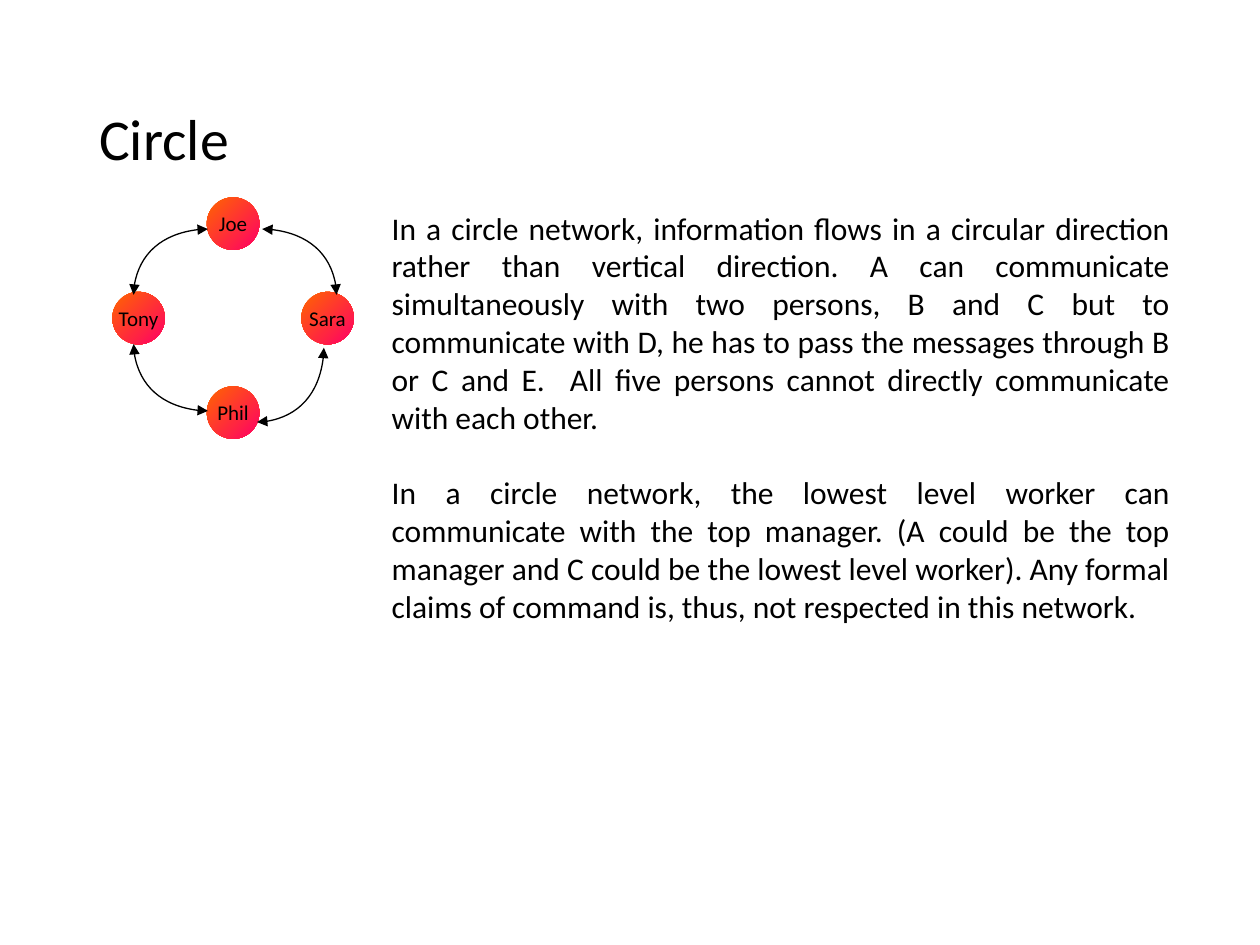
from dataclasses import dataclass

from lxml.etree import SubElement
from pptx import Presentation
from pptx.dml.color import RGBColor
from pptx.enum.shapes import MSO_SHAPE as Shape
from pptx.enum.text import MSO_ANCHOR as Anchor, MSO_AUTO_SIZE as AutoSize, PP_ALIGN as Align
from pptx.oxml.ns import qn
from pptx.util import Pt

TITLE = "Circle"
BODY = [
    "In a circle network, information flows in a circular direction rather than "
    "vertical direction. A can communicate simultaneously with two persons, B and C "
    "but to communicate with D, he has to pass the messages through B or C and E.  "
    "All five persons cannot directly communicate with each other.",
    "In a circle network, the lowest level worker can communicate with the top manager. "
    "(A could be the top manager and C could be the lowest level worker). Any formal "
    "claims of command is, thus, not respected in this network.",
]
# Name and direction from the centre of the ring
PEOPLE = [("Joe", 0, -1), ("Tony", -1, 0), ("Sara", 1, 0), ("Phil", 0, 1)]
# Upright end (x, y) at a side person, level end (x, y) at the top or bottom person
LINKS = [
    (185.1, 198.7, 146.9, 241.2),
    (76.3, 168.5, 118.8, 130.9),
    (76.3, 196.6, 118.8, 234.8),
    (192.3, 168.5, 149.8, 130.9),
]
RING_X, RING_Y, RING_RADIUS, NODE_SIZE = 133.2, 181.8, 54, 30
ROUNDNESS = 0.55  # control point reach of a quarter ellipse


@dataclass(frozen=True)
class Theme:
    font: str = "Calibri"
    ink: RGBColor = RGBColor(0, 0, 0)
    node_start: RGBColor = RGBColor(0xFF, 0x66, 0x00)
    node_end: RGBColor = RGBColor(0xFF, 0x00, 0x66)
    title_size: float = 33
    body_size: float = 18
    node_size: float = 12
    line_width: float = 0.75


THEME = Theme()


def format_text(frame, size, align):
    for para in frame.paragraphs:
        para.alignment = align
        for span in para.runs:
            span.font.name = THEME.font
            span.font.size = Pt(size)
            span.font.color.rgb = THEME.ink


def add_title(page):
    title = page.shapes.title
    title.left, title.top, title.width, title.height = Pt(49.5), Pt(28.8), Pt(621), Pt(104.4)
    frame = title.text_frame
    frame.text = TITLE
    frame.vertical_anchor = Anchor.MIDDLE
    frame.paragraphs[0].line_spacing = 0.9
    format_text(frame, THEME.title_size, Align.LEFT)


def add_person(page, name, across, down):
    left = RING_X + across * RING_RADIUS - NODE_SIZE / 2
    top = RING_Y + down * RING_RADIUS - NODE_SIZE / 2
    node = page.shapes.add_shape(Shape.OVAL, Pt(left), Pt(top), Pt(NODE_SIZE), Pt(NODE_SIZE))
    node.shadow.inherit = False
    node.line.fill.background()
    node.fill.gradient()
    node.fill.gradient_angle = 315
    for position, (stop, colour) in enumerate(
        zip(node.fill.gradient_stops, (THEME.node_start, THEME.node_end))
    ):
        stop.position = position
        stop.color.rgb = colour
    frame = node.text_frame
    frame.text = name
    frame.word_wrap = False
    frame.vertical_anchor = Anchor.MIDDLE
    format_text(frame, THEME.node_size, Align.CENTER)


def add_link(page, x, y, end_x, end_y):
    """Draw a quarter of an ellipse with an arrowhead at both ends."""
    builder = page.shapes.build_freeform(Pt(x), Pt(y))
    builder.add_line_segments([(Pt(end_x), Pt(end_y))], close=False)
    link = builder.convert_to_shape()
    link.shadow.inherit = False
    link.fill.background()
    link.line.color.rgb = THEME.ink
    link.line.width = Pt(THEME.line_width)
    properties = link._element.spPr

    # Turn the straight segment into a curve; path points are relative to the shape
    segment = next(properties.iter(qn("a:lnTo")))
    curve_path = segment.getparent()
    curve_path.remove(segment)
    curve = SubElement(curve_path, qn("a:cubicBezTo"))
    bent_y = y + (end_y - y) * ROUNDNESS
    bent_x = end_x + (x - end_x) * ROUNDNESS
    for point_x, point_y in ((x, bent_y), (bent_x, end_y), (end_x, end_y)):
        SubElement(
            curve, qn("a:pt"),
            x=str(Pt(point_x) - link.left), y=str(Pt(point_y) - link.top),
        )

    outline = properties.find(qn("a:ln"))
    for end in ("a:headEnd", "a:tailEnd"):
        SubElement(outline, qn(end), type="triangle")


def add_body(page):
    box = page.shapes.add_textbox(Pt(216.7), Pt(115.7), Pt(459), Pt(269.3))
    frame = box.text_frame
    frame.word_wrap = True
    frame.auto_size = AutoSize.SHAPE_TO_FIT_TEXT
    frame.text = "\n".join(BODY)
    frame.paragraphs[1].space_before = Pt(21.6)
    format_text(frame, THEME.body_size, Align.JUSTIFY)


def main():
    deck = Presentation()
    deck.slide_width, deck.slide_height = Pt(720), Pt(540)
    page = deck.slides.add_slide(deck.slide_layouts[5])
    add_title(page)
    for person in PEOPLE:
        add_person(page, *person)
    for link in LINKS:
        add_link(page, *link)
    add_body(page)
    deck.save("out.pptx")


if __name__ == "__main__":
    main()
